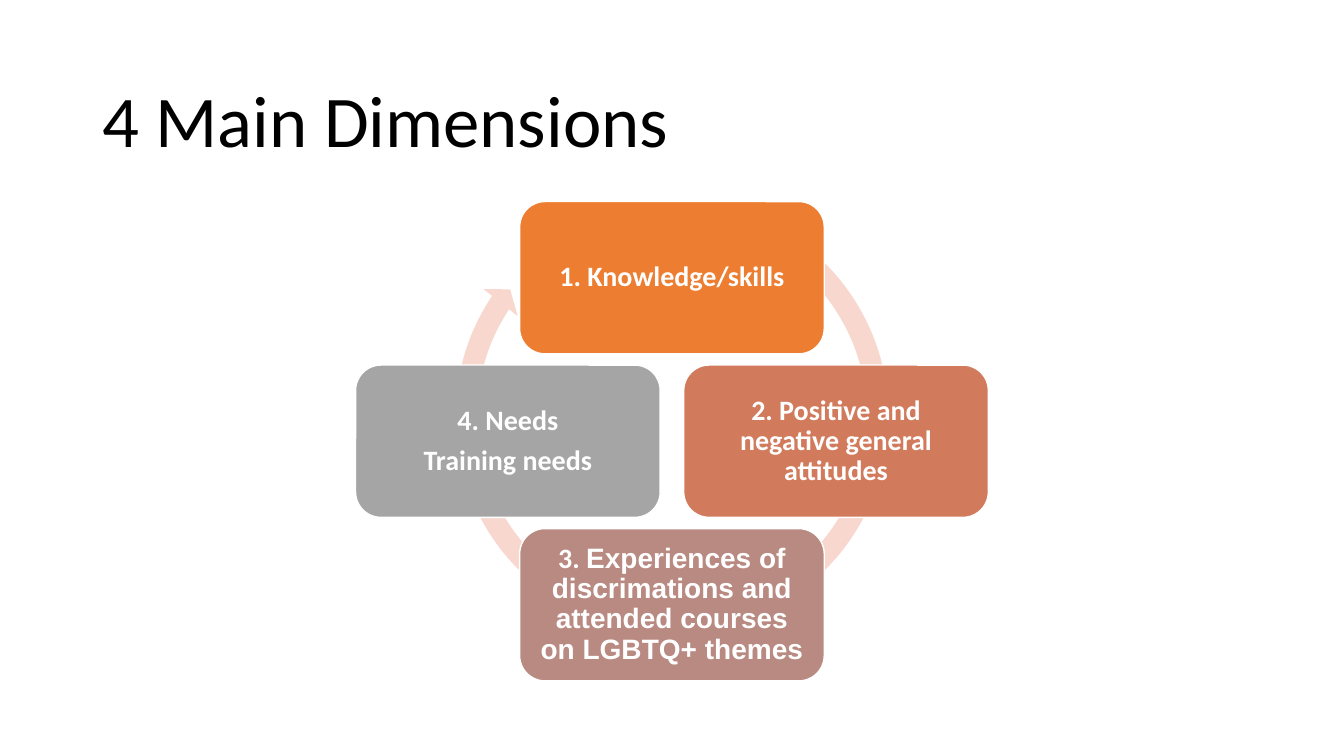
from pptx import Presentation
from pptx.dml.color import RGBColor
from pptx.enum.shapes import MSO_SHAPE
from pptx.enum.text import MSO_ANCHOR, PP_ALIGN
from pptx.util import Pt

ARROW, CARD = MSO_SHAPE.CIRCULAR_ARROW, MSO_SHAPE.ROUNDED_RECTANGLE
MIDDLE = MSO_ANCHOR.MIDDLE
LEFT, CENTER = PP_ALIGN.LEFT, PP_ALIGN.CENTER

COLORS = {
    "title": "000000",
    "white": "FFFFFF",
    "ring": "F8D7CE",
    "knowledge": "ED7D31",
    "attitudes": "D17B5C",
    "experiences": "B98A82",
    "needs": "A5A5A5",
}

# Column and row steps from the centre, colour, paragraphs of (text, font) runs
DIMENSIONS = [
    (0, -1, "knowledge", [[("1. Knowledge/skills", "Calibri")]]),
    (1, 0, "attitudes", [[("2. Positive and negative general attitudes", "Calibri")]]),
    (0, 1, "experiences", [[
        ("3. ", "Calibri"),
        ("Experiences of discrimations and attended courses on LGBTQ+ themes", "Arial"),
    ]]),
    (-1, 0, "needs", [[("4. Needs", "Calibri")], [("Training needs", "Calibri")]]),
]
CARD_WIDTH, CARD_HEIGHT = 217.6, 108.8
RING_SIZE, RING_RISE = 325.4, 17.6
RING_ADJUSTMENTS = (0.047, 2.729, 128.177, 180.402, 0.048)


def color(name):
    return RGBColor.from_string(COLORS[name])


def place_title(slide, left, top, width, height):
    title = slide.shapes.title
    title.left, title.top = Pt(left), Pt(top)
    title.width, title.height = Pt(width), Pt(height)
    frame = title.text_frame
    frame.text = "4 Main Dimensions"
    frame.vertical_anchor = MIDDLE
    frame.word_wrap = True
    heading = frame.paragraphs[0]
    heading.alignment = LEFT
    heading.line_spacing = 0.9
    heading.font.size = Pt(52)
    heading.font.name = "Calibri"
    heading.font.color.rgb = color("title")


def add_filled(slide, preset, fill, center_x, center_y, width, height):
    """Add a preset shape around its centre, without shadow."""
    shape = slide.shapes.add_shape(
        preset, Pt(center_x - width / 2), Pt(center_y - height / 2), Pt(width), Pt(height))
    shape.shadow.inherit = False
    shape.fill.solid()
    shape.fill.fore_color.rgb = color(fill)
    return shape


def write_card(frame, paragraphs):
    frame.word_wrap = True
    frame.vertical_anchor = MIDDLE
    frame.margin_left = frame.margin_right = Pt(5.8)
    frame.margin_top = frame.margin_bottom = Pt(5.8)
    for index, runs in enumerate(paragraphs):
        line = frame.add_paragraph() if index else frame.paragraphs[0]
        line.alignment = CENTER
        line.line_spacing = 0.9
        if index:
            line.space_before = Pt(7)
        line.font.size = Pt(20)
        line.font.bold = True
        line.font.color.rgb = color("white")
        for text, font_name in runs:
            run = line.add_run()
            run.text = text
            run.font.name = font_name


def place_cycle(slide, left, top, width, height):
    """Set the four cards on the sides of the box, over a circular arrow."""
    center_x, center_y = left + width / 2, top + height / 2
    step_x, step_y = (width - CARD_WIDTH) / 2, (height - CARD_HEIGHT) / 2

    ring = add_filled(slide, ARROW, "ring", center_x, center_y - RING_RISE,
                      RING_SIZE, RING_SIZE)
    ring.line.fill.background()
    for index, value in enumerate(RING_ADJUSTMENTS):
        ring.adjustments[index] = value

    for column, row, fill, paragraphs in DIMENSIONS:
        card = add_filled(slide, CARD, fill, center_x + column * step_x,
                          center_y + row * step_y, CARD_WIDTH, CARD_HEIGHT)
        card.line.color.rgb = color("white")
        card.line.width = Pt(1)
        write_card(card.text_frame, paragraphs)


def main():
    deck = Presentation()
    deck.slide_width, deck.slide_height = Pt(960), Pt(540)
    slide = deck.slides.add_slide(deck.slide_layouts[5])
    place_title(slide, 66, 44, 828, 89)
    place_cycle(slide, 254, 144, 452, 342.4)
    deck.save("out.pptx")


if __name__ == "__main__":
    main()
